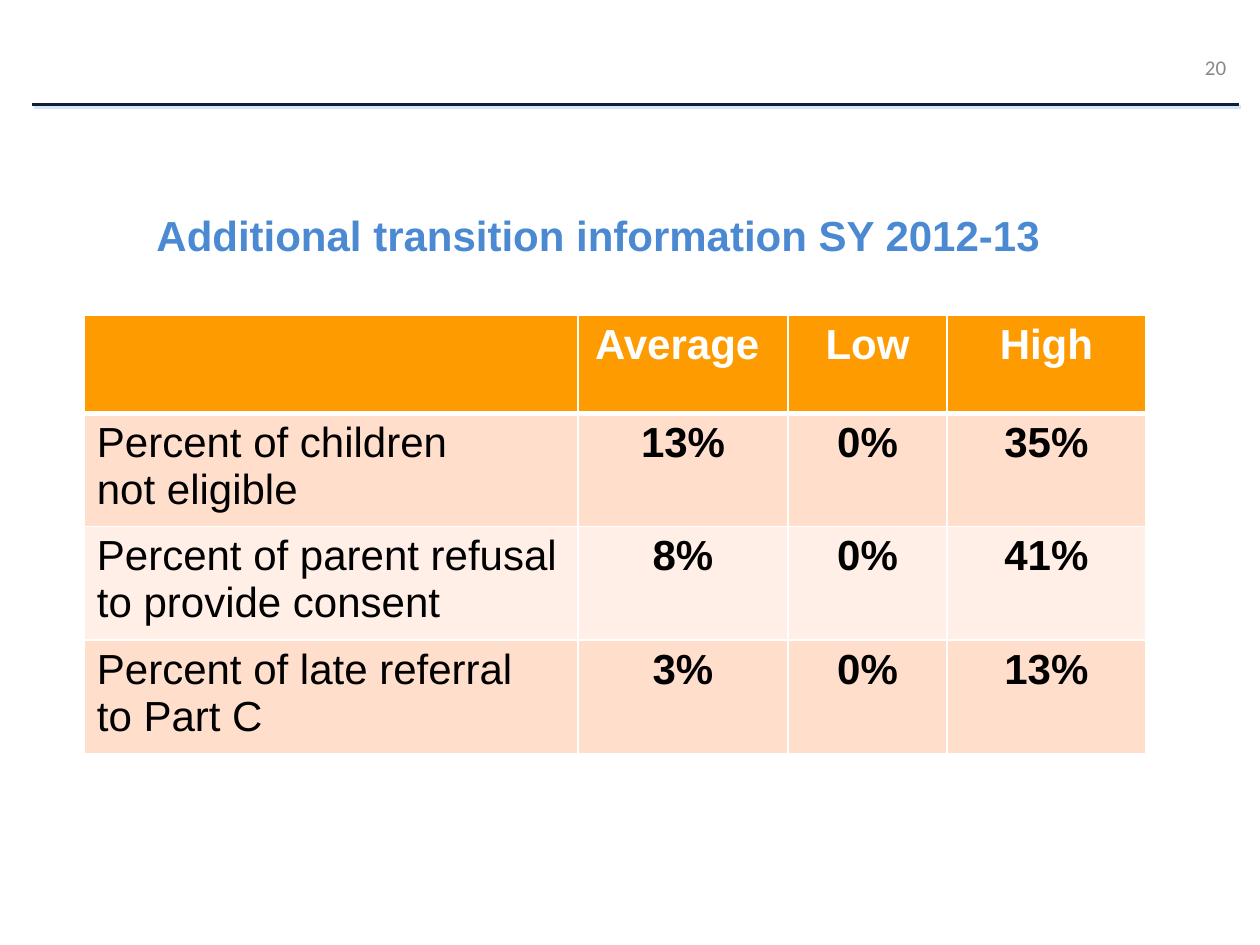
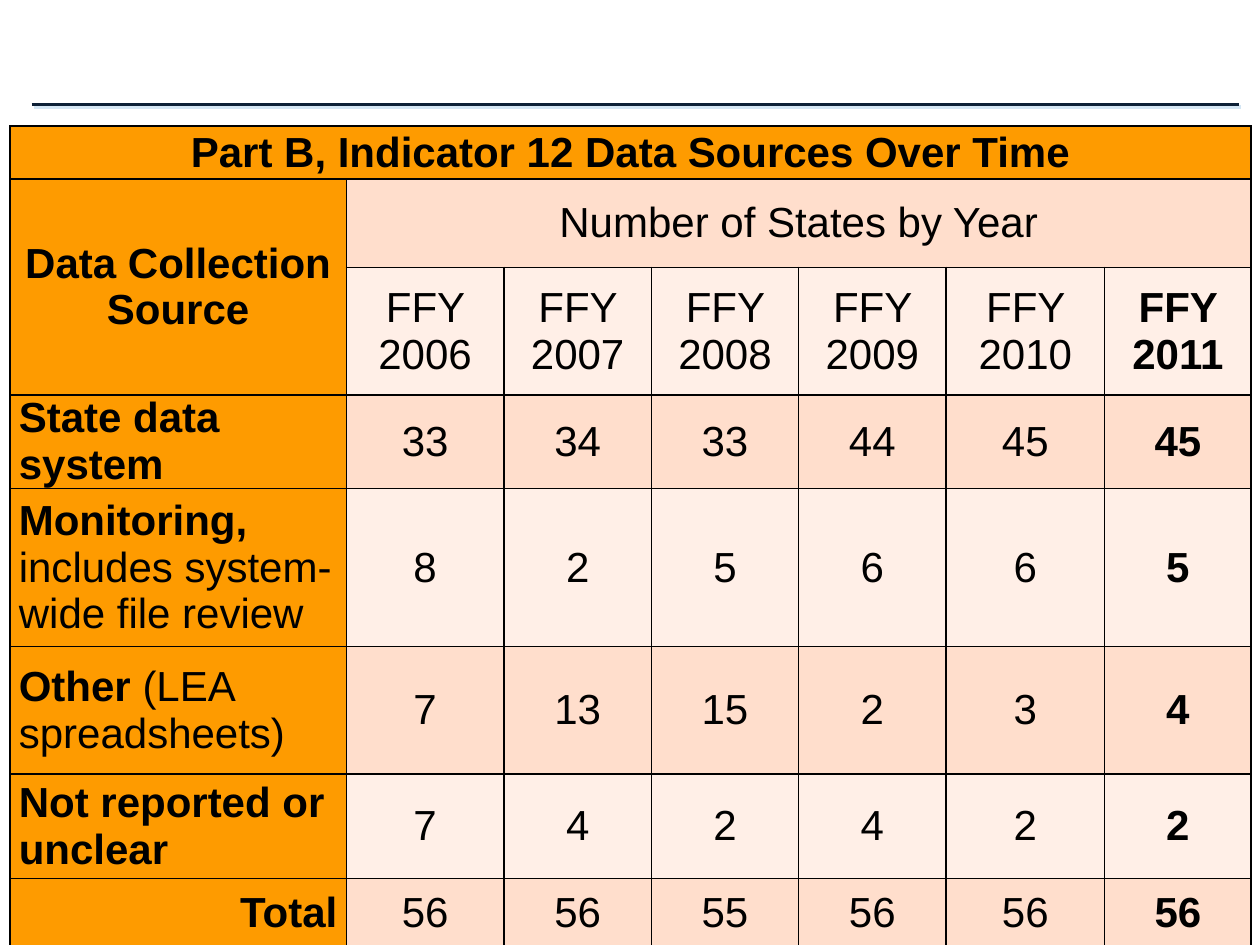
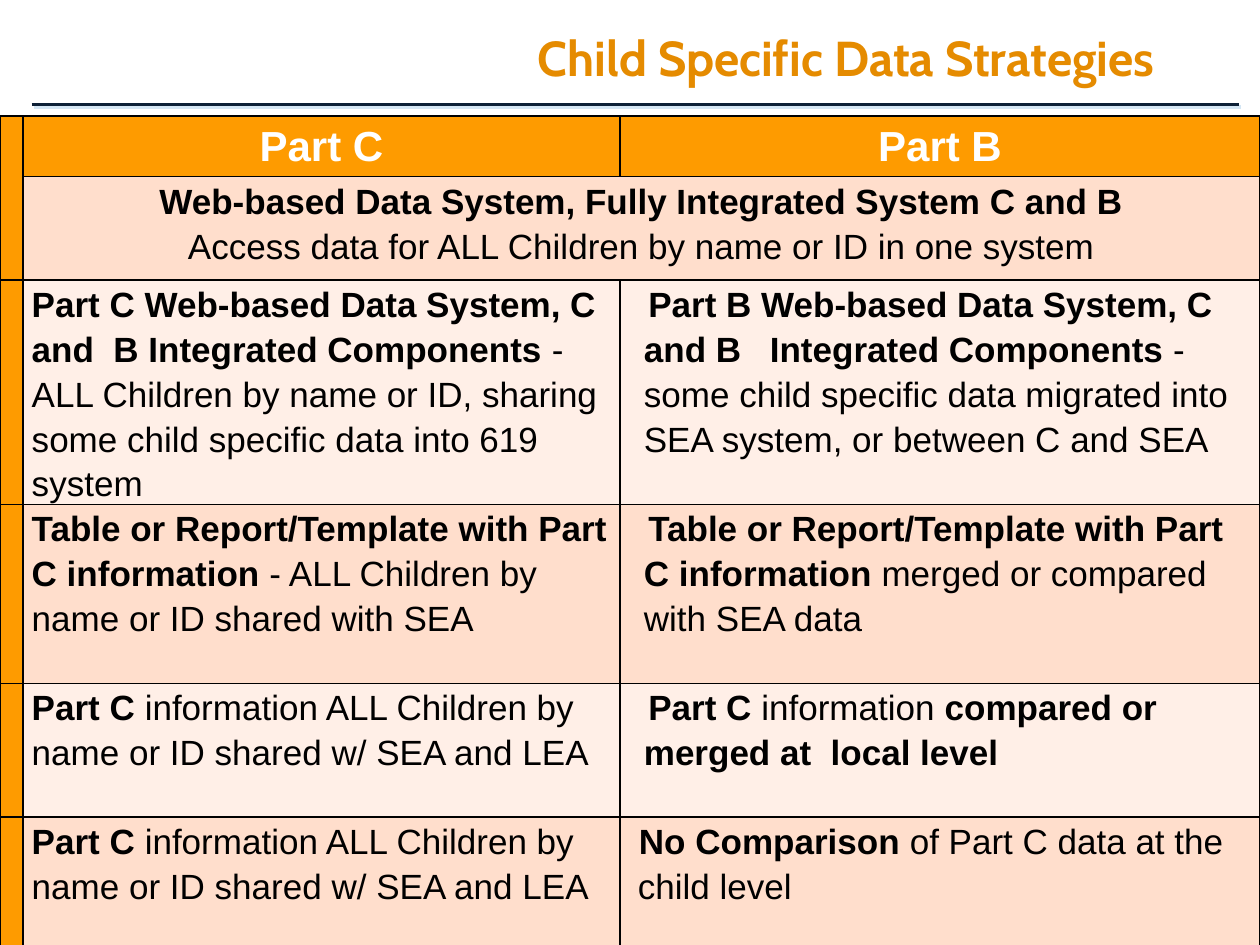
from dataclasses import dataclass

from lxml.etree import SubElement
from pptx import Presentation
from pptx.dml.color import RGBColor
from pptx.enum.shapes import MSO_CONNECTOR
from pptx.enum.text import MSO_ANCHOR, MSO_AUTO_SIZE, PP_ALIGN
from pptx.oxml.ns import qn
from pptx.util import Cm, Pt

LEFT, MID, RIGHT = PP_ALIGN.LEFT, PP_ALIGN.CENTER, PP_ALIGN.RIGHT


@dataclass(frozen=True)
class Theme:
    navy: str = "0D2036"
    mist: str = "D4E6F4"
    gray: str = "898989"
    blue: str = "4B8AD2"
    amber: str = "E58B00"
    orange: str = "FE9B00"
    bands: tuple = ("FFEFE7", "FFDECC")
    black: str = "000000"
    white: str = "FFFFFF"
    face: str = "Arial"
    display: str = "Cabin"
    small: str = "Calibri"
    title: int = 28
    head: int = 24
    body: int = 20
    note: int = 12


def add_node(parent, tag, **attrs):
    return SubElement(parent, qn(tag), {k: str(v) for k, v in attrs.items()})


def style(para, face, size, color, bold=None):
    font = para.font
    font.name, font.size, font.bold = face, Pt(size), bold
    font.color.rgb = RGBColor.from_string(color)


def add_runs(para, text):
    """Add text as runs; asterisks switch bold on and off."""
    for i, part in enumerate(text.split("*")):
        if part:
            run = para.add_run()
            run.text, run.font.bold = part, i % 2 == 1


def set_edges(cell, color, **widths):
    """Draw cell borders; widths in points by side, given as L, R, T, B."""
    props = cell._tc.get_or_add_tcPr()
    for side, width in widths.items():
        line = add_node(props, f"a:ln{side}", w=Pt(width))
        add_node(add_node(line, "a:solidFill"), "a:srgbClr", val=color)


def set_indent(para, margin, first, tab=None):
    props = para._p.get_or_add_pPr()
    props.set("marL", str(Cm(margin)))
    props.set("indent", str(Cm(first)))
    if tab:
        add_node(add_node(props, "a:tabLst"), "a:tab", pos=Cm(tab), algn="l")


class Deck:
    def __init__(self, theme):
        self.theme = theme
        self.prs = Presentation()
        self.prs.slide_width, self.prs.slide_height = Cm(25.4), Cm(19.05)
        self.slide = None

    def start(self, titled=True):
        """Begin a slide with the shared rule across its top."""
        layout = self.prs.slide_layouts[5 if titled else 6]
        self.slide = self.prs.slides.add_slide(layout)
        self.rule(0.64, 24.97, 2.11)

    def rule(self, left, right, y):
        line = self.slide.shapes.add_connector(
            MSO_CONNECTOR.STRAIGHT, Cm(left), Cm(y), Cm(right), Cm(y))
        line.line.color.rgb = RGBColor.from_string(self.theme.navy)
        line.line.width = Pt(2)
        effects = add_node(line._element.spPr, "a:effectLst")
        shadow = add_node(effects, "a:outerShdw", blurRad=0, dist=Pt(2),
                          dir=40 * 60000, rotWithShape=0)
        add_node(shadow, "a:srgbClr", val=self.theme.mist)

    def title(self, text, box, face, size, color, wrap=True):
        shape = self.slide.shapes.title
        shape.left, shape.top, shape.width, shape.height = map(Cm, box)
        frame = shape.text_frame
        frame.text = text
        frame.word_wrap, frame.auto_size = wrap, MSO_AUTO_SIZE.NONE
        frame.vertical_anchor = MSO_ANCHOR.TOP
        para = frame.paragraphs[0]
        para.alignment = LEFT
        style(para, face, size, color, True)

    def number(self, text):
        box = self.slide.shapes.add_textbox(Cm(20.52), Cm(0.84), Cm(4.45), Cm(1.02))
        frame = box.text_frame
        frame.word_wrap, frame.vertical_anchor = True, MSO_ANCHOR.MIDDLE
        para = frame.paragraphs[0]
        para.text, para.alignment = text, RIGHT
        style(para, self.theme.small, self.theme.note, self.theme.gray)

    def table(self, rows, at, cols, heights, align, edge, size=None, top=None,
              base=1, stub=True, tight=True, anchor=MSO_ANCHOR.TOP, space=None,
              spans=()):
        """Add a table. align maps (row, column) to an alignment, top colours
        the header text, base is the header's lower border, stub fills the
        first column like the header and spans lists corner pairs to merge."""
        theme = self.theme
        grid = self.slide.shapes.add_table(
            len(rows), len(cols), *map(Cm, at), Cm(sum(cols)), Cm(sum(heights))).table
        grid.first_row = grid.horz_banding = False
        for col, width in zip(grid.columns, cols):
            col.width = Cm(width)
        for row, height in zip(grid.rows, heights):
            row.height = Cm(height)
        for r, row in enumerate(rows):
            for c, text in enumerate(row):
                cell = grid.cell(r, c)
                set_edges(cell, edge, L=1, R=1, T=base if r == 1 else 1,
                          B=base if r == 0 else 1)
                head = r == 0 or (stub and c == 0)
                cell.fill.solid()
                cell.fill.fore_color.rgb = RGBColor.from_string(
                    theme.orange if head else theme.bands[r % 2])
                cell.vertical_anchor = anchor
                if tight:
                    cell.margin_left = cell.margin_right = Cm(0.18)
                    cell.margin_top = cell.margin_bottom = 0
                if not text:
                    continue
                for i, part in enumerate(text.split("\n")):
                    frame = cell.text_frame
                    para = frame.add_paragraph() if i else frame.paragraphs[0]
                    add_runs(para, part)
                    para.alignment = align(r, c)
                    if space:
                        para.line_spacing = space
                    style(para, theme.face, theme.head if r == 0 else size or theme.head,
                          top if r == 0 and top else theme.black)
        for first, last in spans:
            grid.cell(*first).merge(grid.cell(*last))
        return grid

    def save(self):
        self.prs.save("out.pptx")


def add_rates(deck):
    theme = deck.theme
    deck.start()
    deck.number("20")
    rows = [
        ["", "*Average *", "*Low*", "*High*"],
        ["Percent of children\nnot eligible", "*13%*", "*0%*", "*35%*"],
        ["Percent of parent refusal to provide consent", "*8%*", "*0%*", "*41%*"],
        ["Percent of late referral\nto Part C", "*3%*", "*0%*", "*13%*"],
    ]
    deck.table(rows, (1.7, 6.35), (9.95, 4.24, 3.2, 4.01), [1.98] * 4,
               lambda r, c: MID if c else LEFT, theme.white, top=theme.white,
               base=3, stub=False, tight=False)
    deck.title("Additional transition information SY 2012-13",
               (2.9, 4.09, 18.49, 1.27), theme.face, theme.head, theme.blue, False)


def add_sources(deck):
    deck.start(titled=False)
    counts = {
        "*State data system*": (33, 34, 33, 44, 45, 45),
        "*Monitoring, *includes system-wide file review": (8, 2, 5, 6, 6, 5),
        "*Other *(LEA spreadsheets)": (7, 13, 15, 2, 3, 4),
        "*Not reported or unclear*": (7, 4, 2, 4, 2, 2),
        "*Total*": (56, 56, 55, 56, 56, 56),
    }
    years = [f"FFY {year}" for year in range(2006, 2012)]
    rows = [
        ["*Part B, Indicator 12 Data Sources Over Time*"] + [""] * 6,
        ["*Data Collection Source*", "Number of States by Year"] + [""] * 5,
        ["", *years[:-1], f"*{years[-1]}*"],
    ]
    for source, values in counts.items():
        rows.append([source, *map(str, values[:-1]), f"*{values[-1]}*"])
    final = len(rows) - 1

    def align(r, c):
        if c or r < 3:
            return MID
        return RIGHT if r == final else LEFT

    deck.table(rows, (0.2, 2.54), (6.78, 3.18, 2.97, 2.97, 2.97, 3.2, 2.95),
               (1.07, 1.78, 2.57, 1.65, 3.18, 2.57, 2.11, 1.37), align,
               deck.theme.black, anchor=MSO_ANCHOR.MIDDLE,
               spans=[((0, 0), (0, 6)), ((1, 0), (2, 0)), ((1, 1), (1, 6))])


def add_plans(deck):
    theme = deck.theme
    deck.start()
    shared = "*Part C *information ALL Children by name or ID shared w/ SEA and LEA"
    report = "*Table or Report/Template with Part C information *"
    rows = [
        ["", "*Part C*", "*Part B*"],
        ["", "*Web-based Data System, Fully Integrated System C and B*\n"
             "Access data for ALL Children by name or ID in one system", ""],
        ["", "*Part C Web-based Data System, C and  B Integrated Components *"
             "- ALL Children by name or ID, sharing some child specific data "
             "into 619 system",
         "*Part B Web-based Data System, C and B\tIntegrated Components *"
         "- some child specific data migrated into SEA system, "
         "or between C and SEA"],
        ["", report + "- ALL Children by name or ID shared with SEA",
         report + "merged or compared with SEA data"],
        ["", shared, "*Part C *information *compared or merged at  local level*"],
        ["", shared, "*No Comparison *of Part C data at the child level"],
    ]
    grid = deck.table(rows, (0, 2.34), (0.46, 12.04, 12.9),
                      (1.22, 2.08, 4.19, 3.61, 2.69, 2.72),
                      lambda r, c: MID if r < 2 else LEFT, theme.black,
                      size=theme.body, top=theme.white, space=1.15,
                      spans=[((0, 0), (1, 0)), ((1, 1), (1, 2))])
    indents = {2: (0.3, 0.09, 3.27), 3: (0.3, 0.09), 4: (0.3, 0.09), 5: (0.18, 0.02)}
    for r, indent in indents.items():
        para = grid.cell(r, 2).text_frame.paragraphs[0]
        props = para._p.get_or_add_pPr()
        font = props.find(qn("a:defRPr"))
        set_indent(para, *indent)
        props.append(font)
    deck.title("Child Specific Data Strategies", (10.59, 0.43, 14.17, 1.45),
               theme.display, theme.title, theme.amber)


def main():
    deck = Deck(Theme())
    add_rates(deck)
    add_sources(deck)
    add_plans(deck)
    deck.save()


if __name__ == "__main__":
    main()
